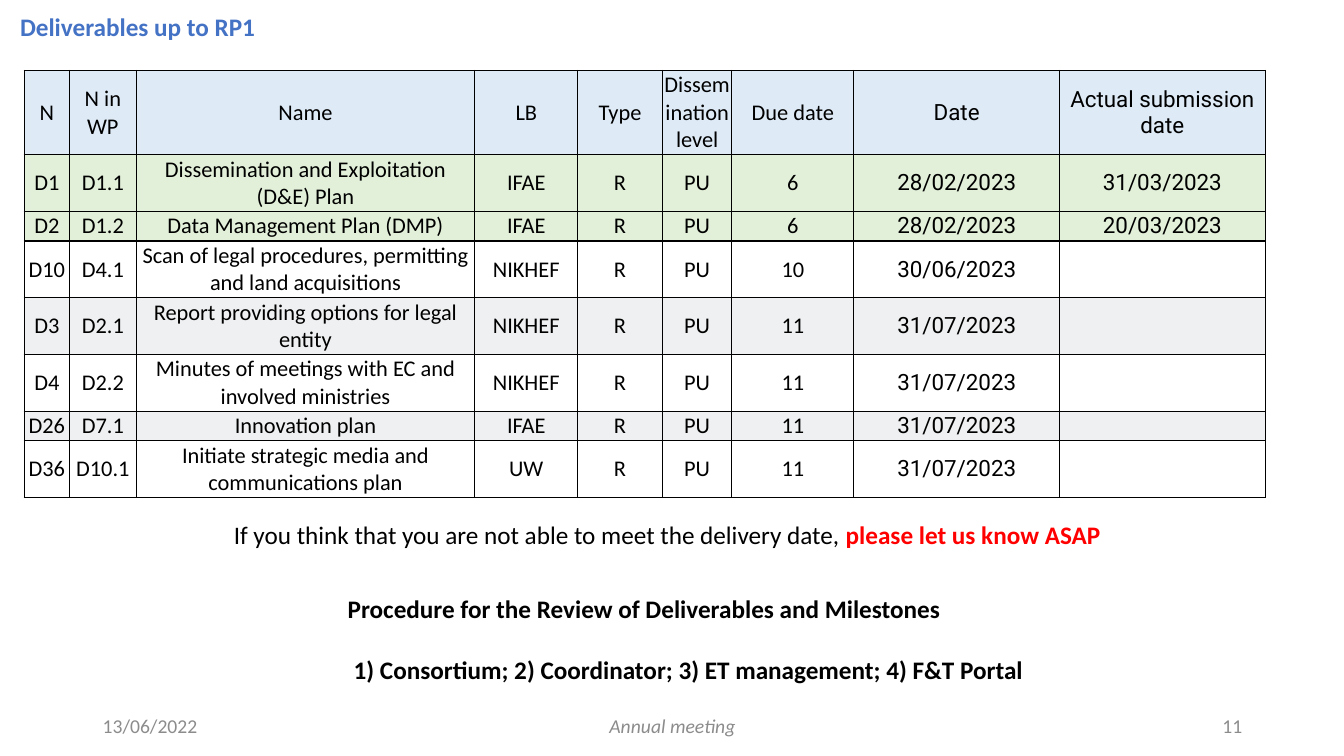
from dataclasses import dataclass

from lxml import etree
from pptx import Presentation
from pptx.dml.color import RGBColor
from pptx.enum.text import MSO_ANCHOR, PP_ALIGN
from pptx.oxml.ns import qn
from pptx.util import Inches, Pt

LEFT, CENTER, RIGHT = PP_ALIGN.LEFT, PP_ALIGN.CENTER, PP_ALIGN.RIGHT
TOP, MIDDLE = MSO_ANCHOR.TOP, MSO_ANCHOR.MIDDLE

BLACK, WHITE, GREY = "000000", "FFFFFF", "8C8C8C"
BLUE, RED = "4472C4", "FF0000"
HEADER_FILL, SUBMITTED_FILL, BAND_FILL = "DEEBF7", "E2F0D9", "EFF0F1"

HEADINGS = ("N", "N in WP", "Name", "LB", "Type", "Dissemination level",
            "Due date", "Date", "Actual submission date")
COLUMN_WIDTHS = (0.45, 0.66, 3.36, 1.02, 0.84, 0.69, 1.21, 2.04, 2.04)
FIRST_ROBOTO_COLUMN = 7
HEADER_HEIGHT, ONE_LINE_HEIGHT, TWO_LINE_HEIGHT = 0.83, 0.28, 0.55
ONE_LINE_LIMIT = 30
CELL_SIZE = 16


@dataclass
class Deliverable:
    number: str
    number_in_wp: str
    name: str
    lead: str
    due_month: int
    date: str
    submitted: str = ""

    def cells(self) -> tuple[str, ...]:
        return (self.number, self.number_in_wp, self.name, self.lead, "R", "PU",
                str(self.due_month), self.date, self.submitted)


@dataclass
class Span:
    text: str
    color: str = BLACK
    bold: bool = False
    italic: bool = False


@dataclass
class Caption:
    left: float
    top: float
    width: float
    height: float
    paragraphs: list[list[Span]]
    size: int = 18
    align: PP_ALIGN = LEFT
    anchor: MSO_ANCHOR = TOP
    wrap: bool = False


DELIVERABLES = [
    Deliverable("D1", "D1.1", "Dissemination and Exploitation (D&E) Plan", "IFAE",
                6, "28/02/2023", "31/03/2023"),
    Deliverable("D2", "D1.2", "Data Management Plan (DMP)", "IFAE",
                6, "28/02/2023", "20/03/2023"),
    Deliverable("D10", "D4.1", "Scan of legal procedures, permitting and land acquisitions",
                "NIKHEF", 10, "30/06/2023"),
    Deliverable("D3", "D2.1", "Report providing options for legal entity", "NIKHEF",
                11, "31/07/2023"),
    Deliverable("D4", "D2.2", "Minutes of meetings with EC and involved ministries",
                "NIKHEF", 11, "31/07/2023"),
    Deliverable("D26", "D7.1", "Innovation plan", "IFAE", 11, "31/07/2023"),
    Deliverable("D36", "D10.1", "Initiate strategic media and communications plan", "UW",
                11, "31/07/2023"),
]

TITLE = Caption(0.1, 0.06, 2.55, 0.4, [[Span("Deliverables up to RP1", BLUE, bold=True)]])
REMINDER = Caption(2.22, 5.1, 8.89, 0.4, [[
    Span("If you think that you are not able to meet the delivery date, "),
    Span("please let us know ASAP", RED, bold=True)]])
PROCEDURE = Caption(3.35, 5.84, 6.9, 1.01, [
    [Span("Procedure for the Review of Deliverables and Milestones", bold=True)],
    [Span("1) Consortium; 2) Coordinator; 3) ET management; 4) F&T Portal", bold=True)]])
FOOTERS = [
    Caption(9.42, 7, 3, 0.4, [[Span("11", GREY)]], 14, RIGHT, MIDDLE, True),
    Caption(4.42, 7, 4.5, 0.4, [[Span("Annual meeting", GREY, italic=True)]],
            14, CENTER, MIDDLE, True),
    Caption(0.92, 7, 3, 0.4, [[Span("13/06/2022", GREY)]], 14, LEFT, MIDDLE, True),
]


def rgb(value: str) -> RGBColor:
    return RGBColor.from_string(value)


def format_font(font, size: int, color: str, bold=False, italic=False, name="Calibri") -> None:
    font.name, font.size = name, Pt(size)
    font.bold, font.italic = bold, italic
    font.color.rgb = rgb(color)


def add_caption(slide, caption: Caption):
    box = slide.shapes.add_textbox(Inches(caption.left), Inches(caption.top),
                                   Inches(caption.width), Inches(caption.height))
    frame = box.text_frame
    frame.word_wrap = caption.wrap
    frame.vertical_anchor = caption.anchor
    for index, spans in enumerate(caption.paragraphs):
        paragraph = frame.add_paragraph() if index else frame.paragraphs[0]
        paragraph.alignment = caption.align
        for span in spans:
            run = paragraph.add_run()
            run.text = span.text
            format_font(run.font, caption.size, span.color, span.bold, span.italic)
    return frame


def add_borders(cell) -> None:
    """Draw a one-point black line on all four sides; call before filling."""
    properties = cell._tc.get_or_add_tcPr()
    for side in ("a:lnL", "a:lnR", "a:lnT", "a:lnB"):
        line = etree.SubElement(properties, qn(side), w=str(Pt(1)))
        solid = etree.SubElement(line, qn("a:solidFill"))
        etree.SubElement(solid, qn("a:srgbClr"), val=BLACK)


def fill_cell(cell, text: str, fill: str, font_name: str) -> None:
    cell.margin_left = cell.margin_right = Inches(0.01)
    cell.margin_top = cell.margin_bottom = Inches(0.01)
    cell.vertical_anchor = MIDDLE
    add_borders(cell)
    cell.fill.solid()
    cell.fill.fore_color.rgb = rgb(fill)
    paragraph = cell.text_frame.paragraphs[0]
    paragraph.alignment = CENTER
    if text:
        paragraph.text = text
        format_font(paragraph.runs[0].font, CELL_SIZE, BLACK, name=font_name)
    else:
        # An empty cell would otherwise stretch its row to the default text size
        etree.SubElement(paragraph._p, qn("a:endParaRPr"), sz=str(CELL_SIZE * 100))


def row_fill(index: int, deliverable: Deliverable) -> str:
    if deliverable.submitted:
        return SUBMITTED_FILL
    return BAND_FILL if index % 2 else WHITE


def add_deliverables_table(slide) -> None:
    rows = [(HEADINGS, HEADER_FILL, HEADER_HEIGHT)]
    for index, deliverable in enumerate(DELIVERABLES):
        one_line = len(deliverable.name) <= ONE_LINE_LIMIT
        rows.append((deliverable.cells(), row_fill(index, deliverable),
                     ONE_LINE_HEIGHT if one_line else TWO_LINE_HEIGHT))
    table = slide.shapes.add_table(
        len(rows), len(HEADINGS), Inches(0.24), Inches(0.7),
        Inches(sum(COLUMN_WIDTHS)), Inches(sum(height for _, _, height in rows))).table
    table.first_row = table.horz_banding = False
    for column, width in zip(table.columns, COLUMN_WIDTHS):
        column.width = Inches(width)
    for row, (texts, fill, height) in zip(table.rows, rows):
        row.height = Inches(height)
        for index, (cell, text) in enumerate(zip(row.cells, texts)):
            font_name = "Roboto" if index >= FIRST_ROBOTO_COLUMN else "Calibri"
            fill_cell(cell, text, fill, font_name)


def main() -> None:
    deck = Presentation()
    deck.slide_width, deck.slide_height = Inches(13.33), Inches(7.5)
    slide = deck.slides.add_slide(deck.slide_layouts[6])
    add_deliverables_table(slide)
    for caption in (TITLE, *FOOTERS, REMINDER):
        add_caption(slide, caption)
    heading, steps = add_caption(slide, PROCEDURE).paragraphs
    heading.space_after = Pt(22)
    steps._p.get_or_add_pPr().set("marL", str(Inches(0.06)))
    deck.save("out.pptx")


if __name__ == "__main__":
    main()
